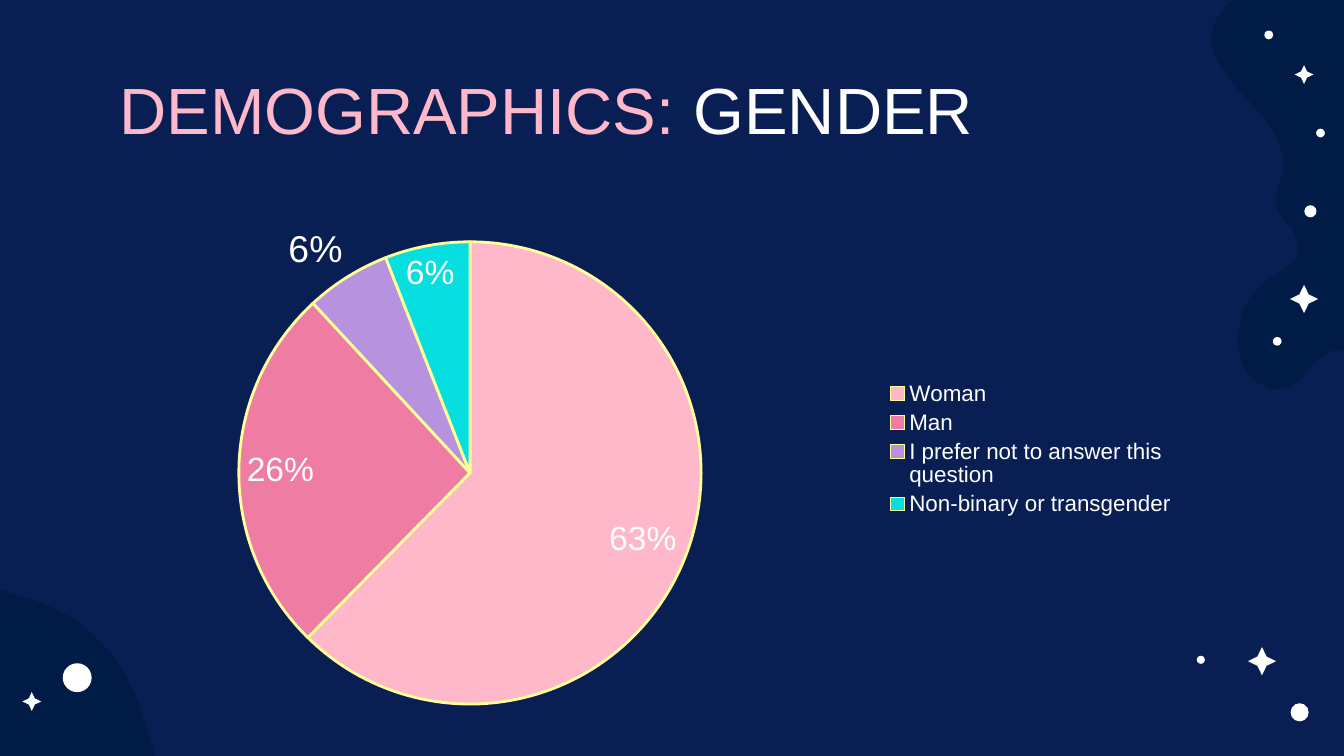
import pptx
import pptx.chart.data
import pptx.dml.color
import pptx.enum.chart
import pptx.enum.shapes
import pptx.enum.text
import pptx.oxml
import pptx.oxml.ns
import pptx.util

RGB = pptx.dml.color.RGBColor
NAVY = RGB(0x09, 0x1F, 0x54)
DEEP = RGB(0x00, 0x1C, 0x46)
WHITE = RGB(0xFF, 0xFF, 0xFF)
PINK = RGB(0xFF, 0xB8, 0xC9)
ROSE = RGB(0xEF, 0x7C, 0xA3)
LILAC = RGB(0xB6, 0x92, 0xDF)
CYAN = RGB(0x07, 0xDE, 0xDF)
LEMON = RGB(0xFF, 0xFF, 0x99)
FONT = "Arial"

# The slide is a grid of 100 columns by 56.25 rows of square cells
CELL = pptx.util.Inches(0.1)
COLS, ROWS = 100, 56.25

# Blobs: a start, then line points (one pair) or curves (three pairs)
CLOUD = [
    (91.7, 0),
    (86.5, 4.6, 95.6, 7.7, 95.5, 12.3),
    (95.5, 13.1, 94.9, 13.9, 94.9, 14.8),
    (94.9, 15.9, 95.7, 16.4, 96.2, 17.2),
    (97.6, 19.8, 94.6, 20.2, 93.4, 21.6),
    (91.9, 23.3, 91.4, 27.2, 93.6, 28.5),
    (94.2, 28.8, 94.6, 29, 95.1, 29),
    (96.7, 29, 97.4, 27, 98.9, 26.2),
    (99.1, 26.1, 99.4, 26, 100, 26.1),
    (COLS, 0),
]
HILL = [
    (0, 43.9),
    (0, ROWS),
    (11.5, ROWS),
    (10.7, 52.8, 9.5, 49.4, 6.6, 46.9),
    (4.8, 45.4, 2.5, 44.5, 0, 43.9),
]

# Sky marks: centre column, centre row, width
DOTS = [(95.03, 25.4, 0.65), (97.5, 15.72, 0.9), (5.75, 50.43, 2.15),
        (94.4, 2.6, 0.65), (98.25, 9.9, 0.65), (89.35, 49.1, 0.6),
        (96.7, 53, 1.35)]
STARS = [(97.03, 22.25, 2.1), (97.03, 5.55, 1.4),
         (2.37, 52.2, 1.4), (93.9, 49.2, 2.1)]

# Chart rows: label, share, fill
GROUPS = [("Woman", 63, PINK), ("Man", 26, ROSE),
          ("I prefer not to answer this question", 6, LILAC),
          ("Non-binary or transgender", 6, CYAN)]


def grid(*cells):
    return [round(n * CELL) for n in cells]


def paint(shape, color):
    shape.fill.solid()
    shape.fill.fore_color.rgb = color
    shape.line.fill.background()
    shape.shadow.inherit = False


def style(font, size, color):
    font.name = FONT
    font.size = pptx.util.Pt(size)
    font.color.rgb = color


def trace(path, steps=16):
    """Turn lines and cubic curves into a list of points."""
    points = [path[0]]
    for part in path[1:]:
        if len(part) == 2:
            points.append(part)
            continue
        ends = [points[-1], part[:2], part[2:4], part[4:]]
        for i in range(1, steps + 1):
            t = i / steps
            u = 1 - t
            mix = (u**3, 3 * u * u * t, 3 * u * t * t, t**3)
            points.append(tuple(sum(m * e[k] for m, e in zip(mix, ends))
                                for k in (0, 1)))
    return points


def add_blob(slide, path):
    first, *rest = [grid(*p) for p in trace(path)]
    pen = slide.shapes.build_freeform(*first)
    pen.add_line_segments(rest, close=True)
    paint(pen.convert_to_shape(), DEEP)


def add_mark(slide, kind, x, y, size):
    box = grid(x - size / 2, y - size / 2, size, size)
    mark = slide.shapes.add_shape(kind, *box)
    paint(mark, WHITE)
    return mark


def add_title(slide, parts):
    frame = slide.shapes.add_textbox(*grid(7.9, 4.9, 84.3, 6.3)).text_frame
    frame.word_wrap = True
    frame.vertical_anchor = pptx.enum.text.MSO_ANCHOR.MIDDLE
    frame.margin_left = frame.margin_right = CELL
    frame.margin_top = frame.margin_bottom = CELL
    for text, color in parts:
        run = frame.paragraphs[0].add_run()
        run.text = text
        style(run.font, 35, color)


def set_place(parent, head, modes, **sizes):
    """Place a chart part after its head tag, in shares of the chart."""
    name = pptx.oxml.ns.qn
    for old in parent.findall(name("c:layout")):
        parent.remove(old)
    vals = {**modes, **sizes}
    body = "".join(f'<c:{k} val="{v}"/>' for k, v in vals.items())
    node = pptx.oxml.parse_xml(
        f'<c:layout {pptx.oxml.ns.nsdecls("c")}>'
        f'<c:manualLayout>{body}</c:manualLayout></c:layout>')
    if head:
        parent.find(name(head)).addnext(node)
    else:
        parent.insert(0, node)


def add_pie(slide):
    data = pptx.chart.data.CategoryChartData(number_format='0"%"')
    data.categories = [name for name, _, _ in GROUPS]
    data.add_series("Series 1", [share for _, share, _ in GROUPS])
    kind = pptx.enum.chart.XL_CHART_TYPE.PIE
    chart = slide.shapes.add_chart(kind, *grid(4.2, 13.6, 84.3, 40),
                                   data).chart
    chart.has_title = False
    style(chart.font, 10, WHITE)
    plot = chart.plots[0]
    plot.vary_by_categories = True

    # Slices
    series = plot.series[0]
    for i, (_, _, color) in enumerate(GROUPS):
        form = series.points[i].format
        form.fill.solid()
        form.fill.fore_color.rgb = color
        form.line.color.rgb = LEMON
        form.line.width = pptx.util.Pt(1.5)

    # Labels: lilac sits outside, cyan is nudged left into its slice
    spot = pptx.enum.chart.XL_LABEL_POSITION
    labels = series.data_labels
    labels.show_value = True
    labels.number_format = '0"%"'
    labels.number_format_is_linked = False
    labels.position = spot.INSIDE_END
    style(labels.font, 18, WHITE)
    for lead in labels._element.findall(
            pptx.oxml.ns.qn("c:showLeaderLines")):
        lead.set("val", "0")
    for i, size, place in ((2, 20, spot.OUTSIDE_END),
                           (3, 18, spot.INSIDE_END)):
        label = series.points[i].data_label
        style(label.font, size, WHITE)
        label.position = place
    last = labels._element.findall(pptx.oxml.ns.qn("c:dLbl"))[-1]
    set_place(last, "c:idx", {}, x=-0.02, y=0)

    # Legend and plot places
    chart.has_legend = True
    legend = chart.legend
    legend.position = pptx.enum.chart.XL_LEGEND_POSITION.RIGHT
    legend.include_in_layout = False
    style(legend.font, 12, WHITE)
    edge = {"xMode": "edge", "yMode": "edge"}
    set_place(plot._element.getparent(), None,
              {"layoutTarget": "inner", **edge},
              x=0.16, y=0.11, w=0.41, h=0.86)
    set_place(legend._element, "c:legendPos", edge,
              x=0.73, y=0.36, w=0.26, h=0.27)


def main():
    deck = pptx.Presentation()
    deck.slide_width, deck.slide_height = grid(COLS, ROWS)
    slide = deck.slides.add_slide(deck.slide_layouts[6])
    slide.background.fill.solid()
    slide.background.fill.fore_color.rgb = NAVY

    # Night sky
    for path in (CLOUD, HILL):
        add_blob(slide, path)
    kinds = pptx.enum.shapes.MSO_SHAPE
    for dot in DOTS:
        add_mark(slide, kinds.OVAL, *dot)
    for star in STARS:
        add_mark(slide, kinds.STAR_4_POINT, *star).adjustments[0] = 0.23

    # Content
    add_title(slide, [("DEMOGRAPHICS: ", PINK), ("GENDER", WHITE)])
    add_pie(slide)
    deck.save("out.pptx")


if __name__ == "__main__":
    main()
